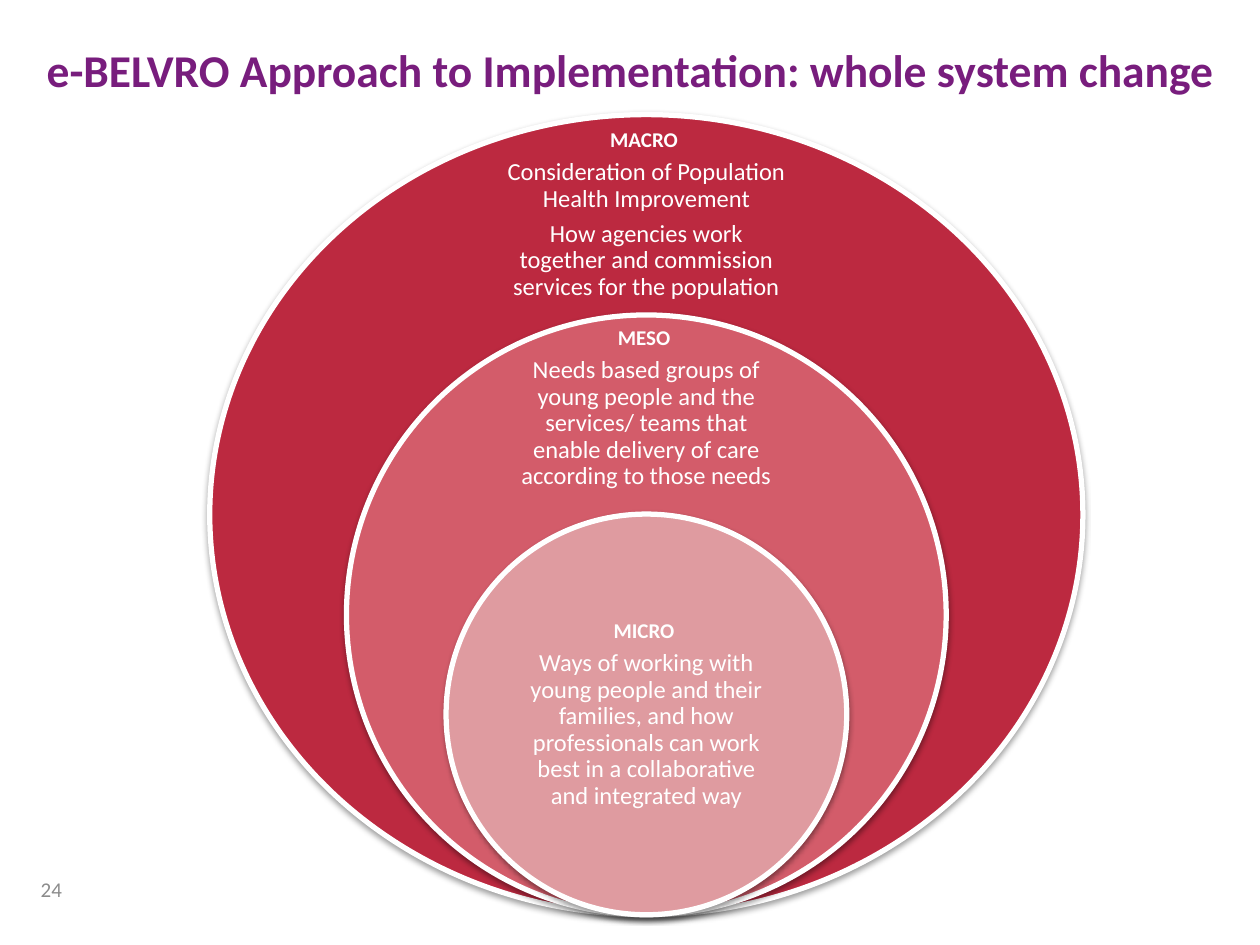
from dataclasses import dataclass

from lxml import etree
from pptx import Presentation
from pptx.dml.color import RGBColor
from pptx.enum import shapes, text
from pptx.oxml import ns
from pptx.util import Inches, Pt


@dataclass(frozen=True)
class Theme:
    """Colours, font and type sizes of the slide."""
    font: str = "Calibri"
    purple: str = "781D7D"
    white: str = "FFFFFF"
    grey: str = "8C8C8C"
    shadow: str = "000000"
    title_size: int = 26
    body_size: int = 14
    label_size: int = 12
    outline: int = 3


THEME = Theme()
CENTRE_X = 5.13
BASE_Y = 7.26

LEVELS = [
    ((6.93, 6.35), "BC2940", (1.23, 2.42, 0.95), "MACRO",
     ["Consideration of Population Health Improvement",
      "How agencies work together and commission services for the population"]),
    ((4.76, 4.76), "D35C6A", (2.8, 2.22, 0.89), "MESO",
     ["Needs based groups of young people and the services/ teams that "
      "enable delivery of care according to those needs"]),
    ((3.18, 3.18), "DF9BA0", (4.88, 2.25, 1.59), "MICRO",
     ["Ways of working with young people and their families, and how "
      "professionals can work best in a collaborative and integrated way"]),
]


def set_font(paragraph, size, color, bold=False):
    """Format a whole paragraph in the theme font."""
    font = paragraph.font
    font.name, font.size, font.bold = THEME.font, Pt(size), bold
    font.color.rgb = RGBColor.from_string(color)


def add_shadow(shape):
    """Give a shape a soft shadow falling straight down."""
    shape.shadow.inherit = False
    effects = shape._element.spPr.find(ns.qn("a:effectLst"))
    shadow = etree.SubElement(
        effects, ns.qn("a:outerShdw"), blurRad=str(Pt(3.1)),
        dist=str(Pt(1.6)), dir="5400000", rotWithShape="0")
    color = etree.SubElement(shadow, ns.qn("a:srgbClr"), val=THEME.shadow)
    etree.SubElement(color, ns.qn("a:alpha"), val="38000")


def add_title(slide, box, wording):
    """Place the slide title in its placeholder."""
    title = slide.shapes.title
    title.left, title.top, title.width, title.height = map(Inches, box)
    frame = title.text_frame
    frame.text = wording
    frame.auto_size = text.MSO_AUTO_SIZE.NONE
    frame.vertical_anchor = text.MSO_ANCHOR.TOP
    paragraph = frame.paragraphs[0]
    paragraph.alignment = text.PP_ALIGN.LEFT
    set_font(paragraph, THEME.title_size, THEME.purple, bold=True)


def add_circle(slide, box, fill):
    """Draw one white-edged ellipse."""
    circle = slide.shapes.add_shape(shapes.MSO_SHAPE.OVAL, *map(Inches, box))
    circle.fill.solid()
    circle.fill.fore_color.rgb = RGBColor.from_string(fill)
    circle.line.color.rgb = RGBColor.from_string(THEME.white)
    circle.line.width = Pt(THEME.outline)
    add_shadow(circle)


def add_caption(slide, box, label, statements):
    """Write a bold label above its centred statements."""
    frame = slide.shapes.add_textbox(*map(Inches, box)).text_frame
    frame.word_wrap = True
    frame.vertical_anchor = text.MSO_ANCHOR.MIDDLE
    frame.margin_left = frame.margin_right = Inches(0.09)
    frame.margin_top = frame.margin_bottom = Inches(0.09)
    frame.text = "\n".join([label + " ", *statements])
    for index, paragraph in enumerate(frame.paragraphs):
        size = THEME.body_size if index else THEME.label_size
        set_font(paragraph, size, THEME.white, bold=index == 0)
        paragraph.alignment = text.PP_ALIGN.CENTER
        paragraph.line_spacing = 0.9
        paragraph.space_after = Pt(0.35 * size)


def add_nested_circles(slide, centre_x, base_y):
    """Stack the levels on a shared base point, largest first."""
    for (width, height), fill, caption, label, statements in LEVELS:
        add_circle(slide, (centre_x - width / 2, base_y - height, width, height), fill)
        top, text_width, text_height = caption
        box = (centre_x - text_width / 2, top, text_width, text_height)
        add_caption(slide, box, label, statements)


def add_page_number(slide, box, number):
    """Write the page number."""
    frame = slide.shapes.add_textbox(*map(Inches, box)).text_frame
    frame.word_wrap = True
    frame.vertical_anchor = text.MSO_ANCHOR.MIDDLE
    frame.text = number
    frame.paragraphs[0].alignment = text.PP_ALIGN.RIGHT
    set_font(frame.paragraphs[0], THEME.label_size, THEME.grey)


def main():
    """Build and save the presentation."""
    presentation = Presentation()
    presentation.slide_width, presentation.slide_height = Inches(10), Inches(7.5)
    slide = presentation.slides.add_slide(presentation.slide_layouts[5])
    add_title(slide, (0.27, 0.28, 9.56, 0.95),
              "e-BELVRO Approach to Implementation: whole system change")
    add_nested_circles(slide, CENTRE_X, BASE_Y)
    add_page_number(slide, (0.12, 6.86, 0.47, 0.4), "24")
    presentation.save("out.pptx")


if __name__ == "__main__":
    main()
